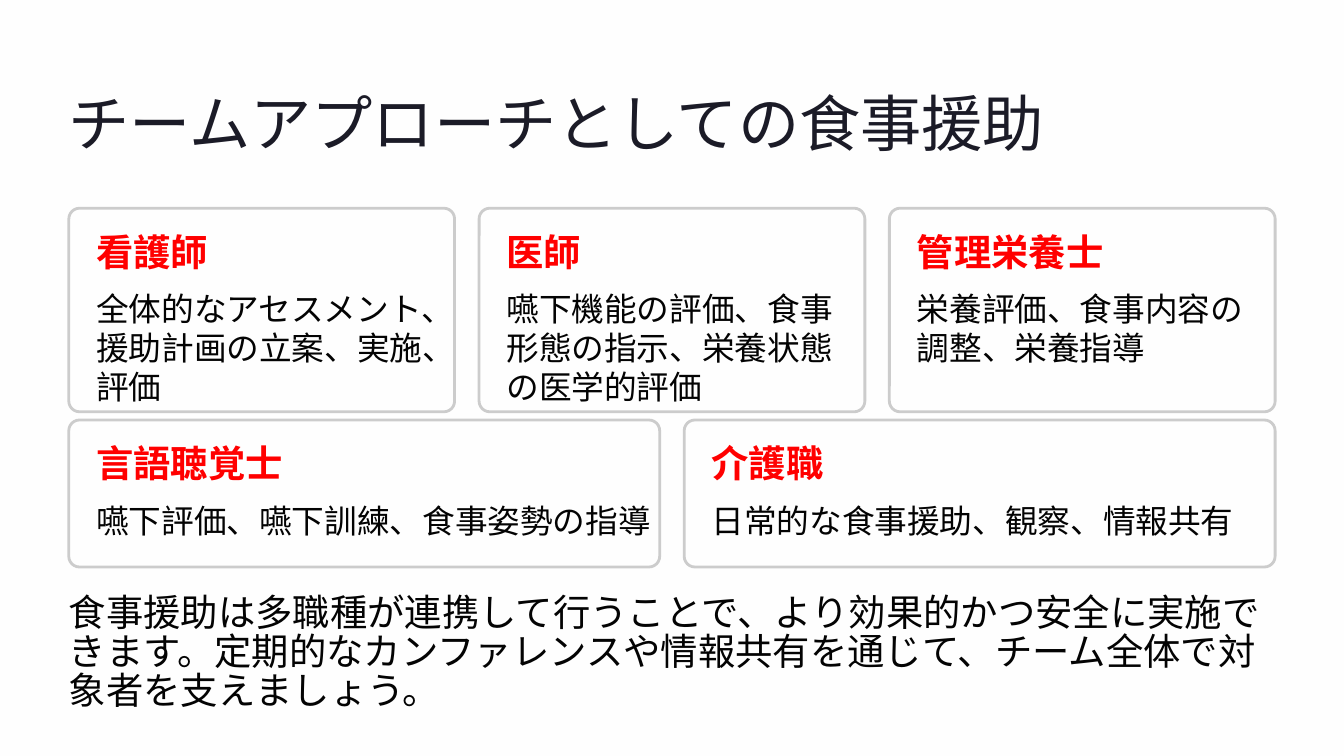
from dataclasses import dataclass

from lxml import etree
from pptx import Presentation
from pptx.dml.color import RGBColor as Rgb
from pptx.enum import shapes, text
from pptx.oxml import ns
from pptx.util import Pt


@dataclass(frozen=True)
class Theme:
    """Colours, fonts and type styles as (font, size, line, colour, bold)."""
    page: str = "FEFEFE"
    card: str = "FFFFFF"
    edge: str = "CCCCCC"
    alpha: int = 95
    title: tuple = ("Inter", 52.5, 65.5, "1B1B27", False)
    role: tuple = ("Inter", 32, 32.5, "FF0000", True)
    duty: tuple = ("Lato", 28, 33.5, "030303", False)
    note: tuple = ("Lato", 32, 33.5, "030303", False)


THEME = Theme()
LEFT, WIDTH, GAP = 59, 1034, 21
TOP_ROW = [
    ("看護師", "全体的なアセスメント、援助計画の立案、実施、評価"),
    ("医師", "嚥下機能の評価、食事形態の指示、栄養状態の医学的評価"),
    ("管理栄養士", "栄養評価、食事内容の調整、栄養指導"),
]
LOW_ROW = [
    ("言語聴覚士", "嚥下評価、嚥下訓練、食事姿勢の指導"),
    ("介護職", "日常的な食事援助、観察、情報共有"),
]


def write(slide, box, words, style, wrap=False):
    """Place one paragraph of text in a box without insets."""
    frame = slide.shapes.add_textbox(*map(Pt, box)).text_frame
    frame.word_wrap = wrap
    frame.auto_size = text.MSO_AUTO_SIZE.NONE
    frame.margin_left = frame.margin_right = 0
    frame.margin_top = frame.margin_bottom = 0
    para = frame.paragraphs[0]
    para.text = words
    name, size, line, tint, bold = style
    para.line_spacing = Pt(line)
    font = para.font
    font.name, font.size, font.bold = name, Pt(size), bold
    font.color.rgb = Rgb.from_string(tint)


def card(slide, box, role, duty, wrap):
    """Draw a rounded card with a role and its duty."""
    x, y, w, h = box
    panel = slide.shapes.add_shape(
        shapes.MSO_SHAPE.ROUNDED_RECTANGLE, *map(Pt, box))
    panel.adjustments[0] = 9.2 / h
    panel.shadow.inherit = False
    panel.fill.solid()
    panel.fill.fore_color.rgb = Rgb.from_string(THEME.card)
    tint = panel.fill._xPr.find(ns.qn("a:solidFill"))[0]
    etree.SubElement(tint, ns.qn("a:alpha"), val=str(THEME.alpha * 1000))
    panel.line.color.rgb = Rgb.from_string(THEME.edge)
    panel.line.width = Pt(2.4)
    pad = 23.5
    write(slide, (x + pad, y + pad, 263.5, 33), role, THEME.role)
    write(slide, (x + pad, y + 69, w - 2 * pad, h - 92), duty,
          THEME.duty, wrap)


def row(slide, box, items, wrap):
    """Share a box equally among a row of cards."""
    x, y, w, h = box
    size = (w - GAP * (len(items) - 1)) / len(items)
    for i, (role, duty) in enumerate(items):
        card(slide, (x + i * (size + GAP), y, size, h), role, duty, wrap)


def team(deck):
    """Build the team approach slide."""
    slide = deck.slides.add_slide(deck.slide_layouts[6])
    fill = slide.background.fill
    fill.solid()
    fill.fore_color.rgb = Rgb.from_string(THEME.page)
    write(slide, (LEFT, 70.5, 840, 65.5),
          "チームアプローチとしての食事援助", THEME.title)
    row(slide, (LEFT, 178.5, WIDTH, 174.5), TOP_ROW, True)
    row(slide, (LEFT, 360, WIDTH, 126), LOW_ROW, False)
    write(slide, (LEFT, 510, WIDTH, 67.5),
          "食事援助は多職種が連携して行うことで、より効果的かつ安全に実施できます。"
          "定期的なカンファレンスや情報共有を通じて、チーム全体で対象者を支えましょう。",
          THEME.note, True)


def main():
    """Create and save the deck."""
    deck = Presentation()
    deck.slide_width, deck.slide_height = Pt(1152), Pt(648)
    team(deck)
    deck.save("out.pptx")


if __name__ == "__main__":
    main()
